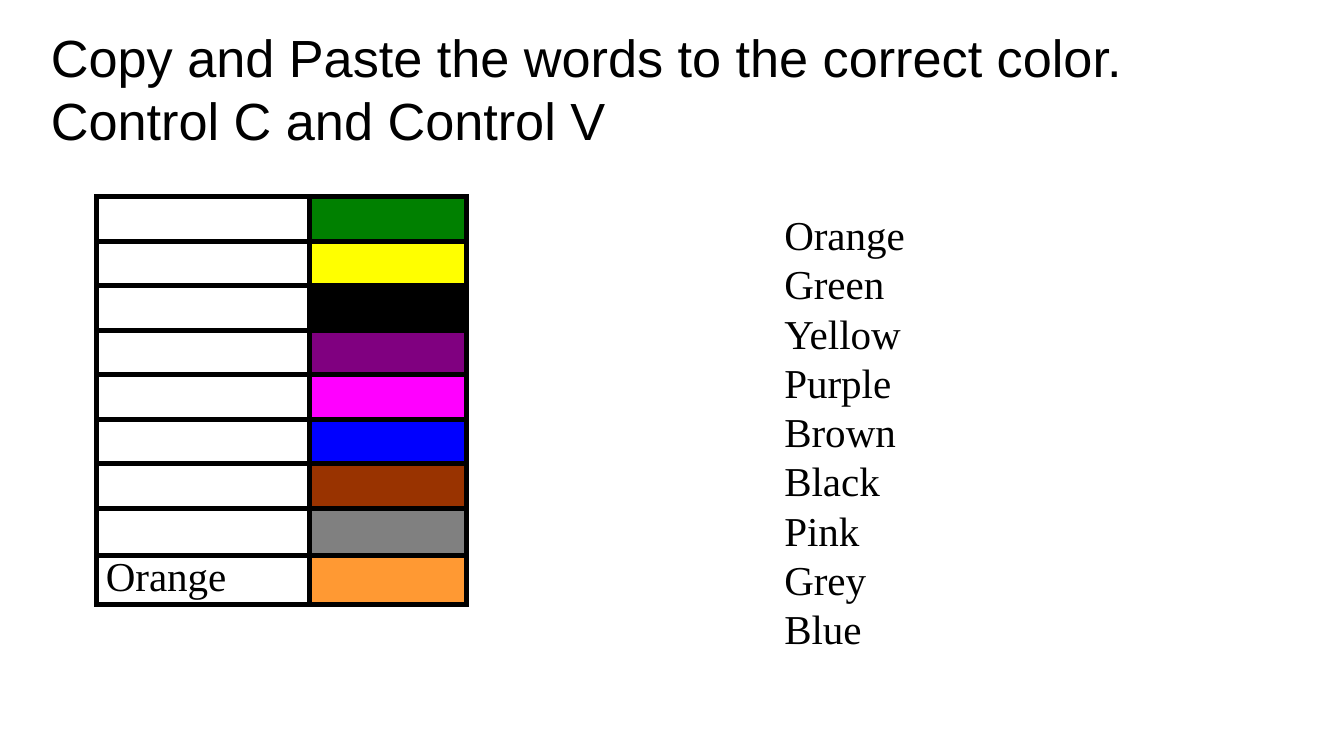
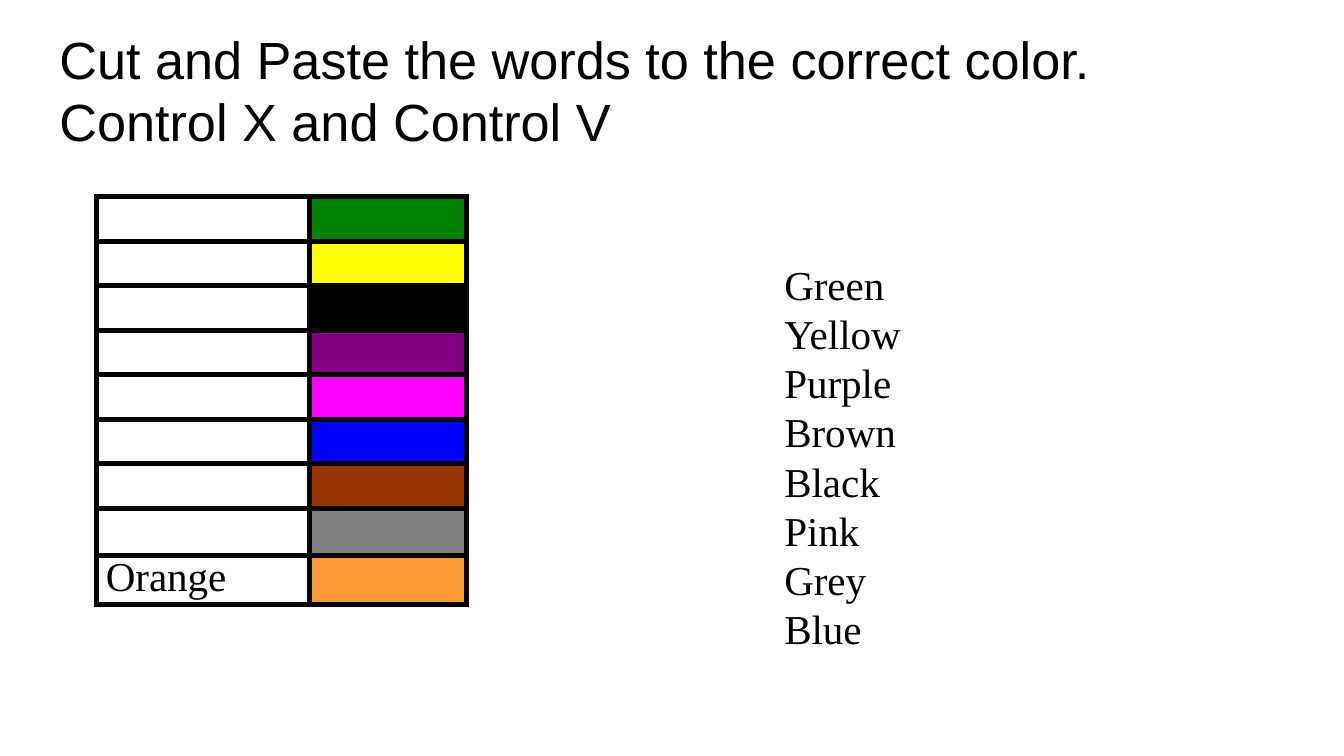
from lxml.etree import SubElement
from pptx import Presentation
from pptx.dml.color import RGBColor
from pptx.enum.text import MSO_ANCHOR as Anchor
from pptx.oxml.ns import qn
from pptx.util import Pt

PX = 5715  # 160 px to the inch
BLACK = "000000"
TITLE_FONT = ("Arial", 28)
WORD_FONT = ("Times New Roman", 22)
INSET = 16
WORD_LINE = 59

SWATCHES = ["008000", "FFFF00", "000000", "800080", "FF00FF",
            "0000FF", "993300", "808080", "FF9933"]
COLUMN_WIDTHS = [253, 187]
ROW_HEIGHTS = [53] * 7 + [56, 53]
WORDS = ["Orange", "Green", "Yellow", "Purple", "Brown",
         "Black", "Pink", "Grey", "Blue"]

TABLE_BOX = (115, 234, 440, 571)
WORDS_BOX = (918, 251, 525, 525)


def px(*lengths):
    return [length * PX for length in lengths]


def color(hex_code):
    return RGBColor.from_string(hex_code)


def style_paragraph(paragraph, font):
    for run in paragraph.runs:
        run.font.name, size = font
        run.font.size = Pt(size)
        run.font.color.rgb = color(BLACK)


def add_text(slide, box, lines, font, anchor, top_inset=INSET):
    frame = slide.shapes.add_textbox(*px(*box)).text_frame
    frame.word_wrap = True
    frame.vertical_anchor = anchor
    frame.margin_left = frame.margin_right = frame.margin_bottom = INSET * PX
    frame.margin_top = top_inset * PX
    for index, line in enumerate(lines):
        paragraph = frame.add_paragraph() if index else frame.paragraphs[0]
        paragraph.text = line
        style_paragraph(paragraph, font)


def add_borders(cell, width=3):
    properties = cell._tc.get_or_add_tcPr()
    for position, side in enumerate(("a:lnL", "a:lnR", "a:lnT", "a:lnB")):
        border = properties.makeelement(qn(side), w=str(Pt(width)))
        fill = SubElement(border, qn("a:solidFill"))
        SubElement(fill, qn("a:srgbClr"), val=BLACK)
        properties.insert(position, border)


def add_color_table(slide, box):
    """Answer cells on the left, colour swatches on the right."""
    table_frame = slide.shapes.add_table(len(SWATCHES), 2, *px(*box))
    table = table_frame.table
    table.first_row = table.horz_banding = False
    for column, width in zip(table.columns, COLUMN_WIDTHS):
        column.width = width * PX
    for row, height, swatch in zip(table.rows, ROW_HEIGHTS, SWATCHES):
        row.height = height * PX
        answer, sample = row.cells
        answer.fill.background()
        sample.fill.solid()
        sample.fill.fore_color.rgb = color(swatch)
        for cell in (answer, sample):
            cell.margin_left = cell.margin_right = 11 * PX
            cell.margin_top = cell.margin_bottom = 0
            add_borders(cell)
    table_frame.height = box[3] * PX
    example = table.cell(len(SWATCHES) - 1, 0)
    example.text_frame.text = "Orange"
    style_paragraph(example.text_frame.paragraphs[0], WORD_FONT)


def add_word_list(slide, box, words):
    """Words already used up leave their lines free at the top."""
    used = len(WORDS) - len(words)
    add_text(slide, box, words, WORD_FONT, Anchor.MIDDLE,
             INSET + used * WORD_LINE)


def add_exercise(deck, title, title_box, words):
    slide = deck.slides.add_slide(deck.slide_layouts[6])
    add_text(slide, title_box, [title], TITLE_FONT, Anchor.TOP)
    add_color_table(slide, TABLE_BOX)
    add_word_list(slide, WORDS_BOX, words)


def main():
    deck = Presentation()
    deck.slide_width, deck.slide_height = px(1600, 900)
    add_exercise(
        deck,
        "Copy and Paste the words to the correct color.\vControl C and Control V",
        (45, 14, 1491, 101), WORDS)
    add_exercise(
        deck,
        "Cut and Paste the words to the correct color.\vControl X and Control V",
        (55, 16, 1491, 101), WORDS[1:])
    deck.save("out.pptx")


if __name__ == "__main__":
    main()
